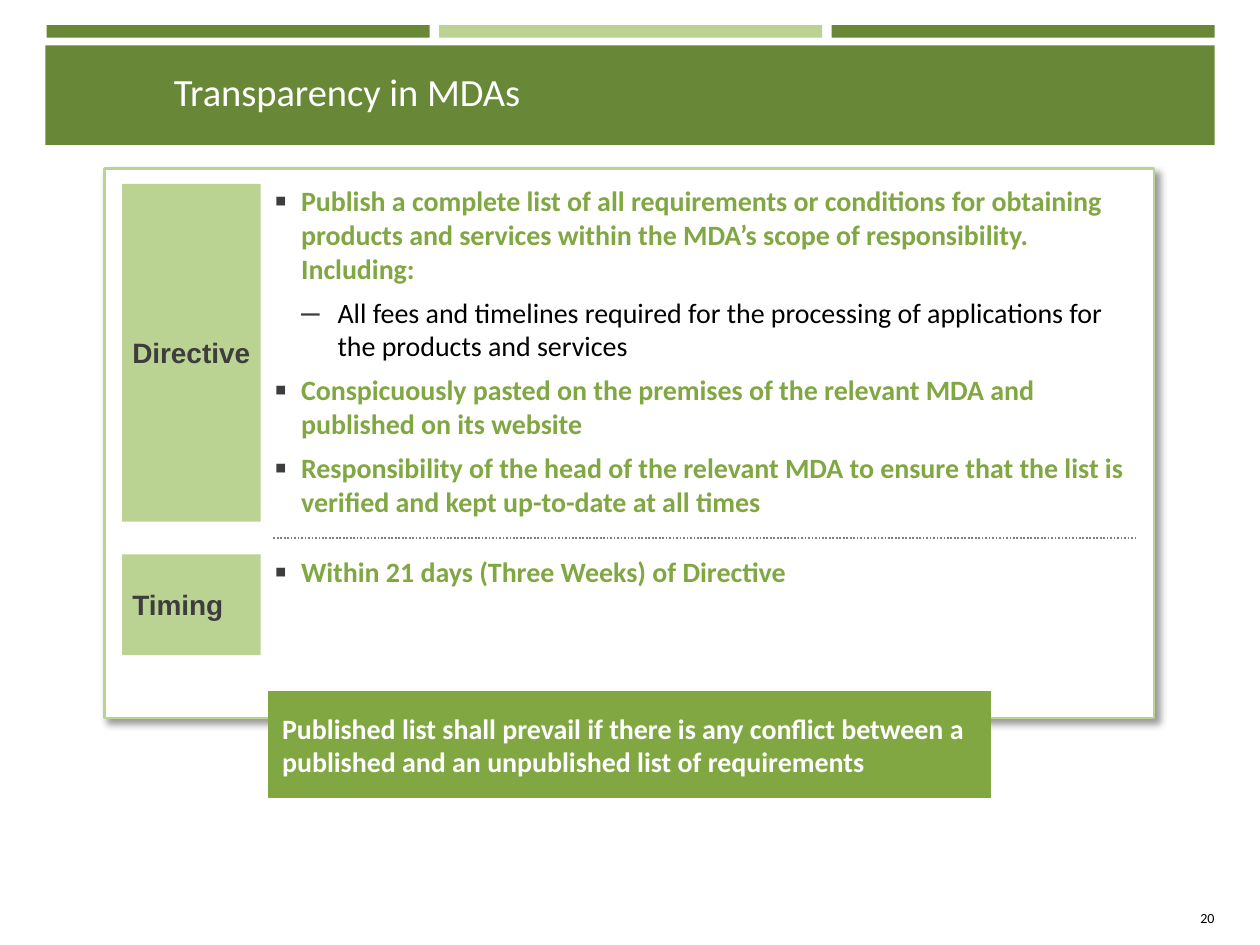
from lxml import etree
from pptx import Presentation
from pptx.dml.color import RGBColor
from pptx.enum.dml import MSO_LINE
from pptx.enum.shapes import MSO_CONNECTOR, MSO_SHAPE
from pptx.enum.text import MSO_ANCHOR, PP_ALIGN
from pptx.oxml.ns import qn
from pptx.util import Inches, Pt

RECT = MSO_SHAPE.RECTANGLE
STRAIGHT = MSO_CONNECTOR.STRAIGHT
DOTS = MSO_LINE.ROUND_DOT
TOP, MIDDLE, BOTTOM = MSO_ANCHOR.TOP, MSO_ANCHOR.MIDDLE, MSO_ANCHOR.BOTTOM
LEFT, RIGHT = PP_ALIGN.LEFT, PP_ALIGN.RIGHT

DARK = RGBColor(0x69, 0x88, 0x37)
LIGHT = RGBColor(0xBA, 0xD3, 0x92)
GREEN = RGBColor(0x81, 0xA7, 0x43)
INK = RGBColor(0x3D, 0x3D, 0x3D)
GRAY = RGBColor(0x80, 0x80, 0x80)
BLACK = RGBColor(0, 0, 0)
WHITE = RGBColor(0xFF, 0xFF, 0xFF)

BULLETS = {1: ("▪", 125, 0.22, 0.21), 2: ("–", 120, 0.51, 0.29)}


def add(parent, tag, **attrs):
    return etree.SubElement(parent, qn(tag), attrs)


class Deck:
    font = "Calibri"
    size = 16

    def __init__(self, wide, high):
        self.prs = Presentation()
        self.prs.slide_width = Inches(wide)
        self.prs.slide_height = Inches(high)
        self.slide = self.prs.slides.add_slide(self.prs.slide_layouts[6])

    def rect(self, x, y, w, h, fill, line=None, width=0.75):
        box = self.slide.shapes.add_shape(RECT, *map(Inches, (x, y, w, h)))
        box.shadow.inherit = False
        box.fill.solid()
        box.fill.fore_color.rgb = fill
        if line is None:
            box.line.fill.background()
        else:
            box.line.color.rgb = line
            box.line.width = Pt(width)
        return box

    def shade(self, box):
        effects = box._element.spPr.find(qn("a:effectLst"))
        outer = add(effects, "a:outerShdw", blurRad=str(Pt(4)), dist=str(Pt(3)),
                    dir="2700000", algn="tl", rotWithShape="0")
        color = add(outer, "a:srgbClr", val=str(BLACK))
        add(color, "a:alpha", val="40000")

    def frame(self, shape, anchor, pad=(0, 0), wrap=True):
        frame = shape.text_frame
        frame.word_wrap = wrap
        frame.vertical_anchor = anchor
        frame.margin_left = frame.margin_right = Inches(pad[0])
        frame.margin_top = frame.margin_bottom = Inches(pad[1])
        return frame

    def run(self, para, text, color, size=None, bold=False, font=None, align=LEFT):
        para.alignment = align
        run = para.add_run()
        run.text = text
        run.font.name = font or self.font
        run.font.size = Pt(size or self.size)
        run.font.bold = bold
        run.font.color.rgb = color

    def text(self, x, y, w, h, words, color, size, anchor, align=LEFT, wrap=True):
        box = self.slide.shapes.add_textbox(*map(Inches, (x, y, w, h)))
        frame = self.frame(box, anchor, wrap=wrap)
        self.run(frame.paragraphs[0], words, color, size, align=align)

    def label(self, x, y, w, h, words):
        box = self.rect(x, y, w, h, LIGHT)
        frame = self.frame(box, MIDDLE, (0.08, 0.08))
        self.run(frame.paragraphs[0], words, INK, bold=True, font="Arial")

    def callout(self, x, y, w, h, words):
        box = self.rect(x, y, w, h, GREEN, GREEN)
        frame = self.frame(box, MIDDLE, (0.11, 0.05))
        self.run(frame.paragraphs[0], words, WHITE, bold=True)

    def bullet(self, para, level):
        mark, scale, left, hang = BULLETS[level]
        para.level = level - 1
        props = para._p.get_or_add_pPr()
        props.set("marL", str(Inches(left)))
        props.set("indent", str(-Inches(hang)))
        add(add(props, "a:buClr"), "a:srgbClr", val=str(INK))
        add(props, "a:buSzPct", val=str(scale * 1000))
        add(props, "a:buFont", typeface="Arial")
        add(props, "a:buChar", char=mark)

    def bullets(self, x, y, w, h, items):
        box = self.slide.shapes.add_textbox(*map(Inches, (x, y, w, h)))
        frame = self.frame(box, TOP)
        for i, (level, words) in enumerate(items):
            para = frame.add_paragraph() if i else frame.paragraphs[0]
            self.bullet(para, level)
            para.space_before = Pt(3 if i else 0)
            para.space_after = Pt(3)
            main = level == 1
            self.run(para, words, GREEN if main else BLACK, bold=main)

    def rule(self, x, y, end):
        line = self.slide.shapes.add_connector(
            STRAIGHT, Inches(x), Inches(y), Inches(end), Inches(y))
        line.line.color.rgb = GRAY
        line.line.width = Pt(1)
        line.line.dash_style = DOTS
        add(line._element.spPr, "a:effectLst")


def main():
    deck = Deck(10, 7.5)
    deck.rect(0.36, 0.36, 9.28, 0.79, DARK)
    for i, color in enumerate((DARK, LIGHT, DARK)):
        deck.rect(0.37 + i * 3.115, 0.2, 3.04, 0.1, color)
    deck.text(9.5, 7.22, 0.14, 0.13, "20", BLACK, 8, MIDDLE, RIGHT, False)
    deck.text(1.38, 0.54, 8.25, 0.37, "Transparency in MDAs", WHITE, 22, BOTTOM)

    deck.shade(deck.rect(0.83, 1.34, 8.33, 4.36, WHITE, LIGHT, 1.5))
    deck.callout(2.13, 5.49, 5.73, 0.84,
                 "Published list shall prevail if there is any conflict between a "
                 "published and an unpublished list of requirements")
    rows = [
        ("Directive", 1.46, 2.68, 2.68, [
            (1, "Publish a complete list of all requirements or conditions for "
                "obtaining products and services within the MDA’s scope of "
                "responsibility. Including:"),
            (2, "All fees and timelines required for the processing of "
                "applications for the products and services"),
            (1, "Conspicuously pasted on the premises of the relevant MDA and "
                "published on its website"),
            (1, "Responsibility of the head of the relevant MDA to ensure that "
                "the list is verified and kept up-to-date at all times"),
        ]),
        ("Timing", 4.4, 0.8, 0.27, [(1, "Within 21 days (Three Weeks) of Directive")]),
    ]
    for name, y, high, deep, items in rows:
        deck.label(0.97, y, 1.1, high, name)
        deck.bullets(2.17, y, 6.86, deep, items)
    deck.rule(2.17, 4.27, 9.03)
    deck.prs.save("out.pptx")


if __name__ == "__main__":
    main()
